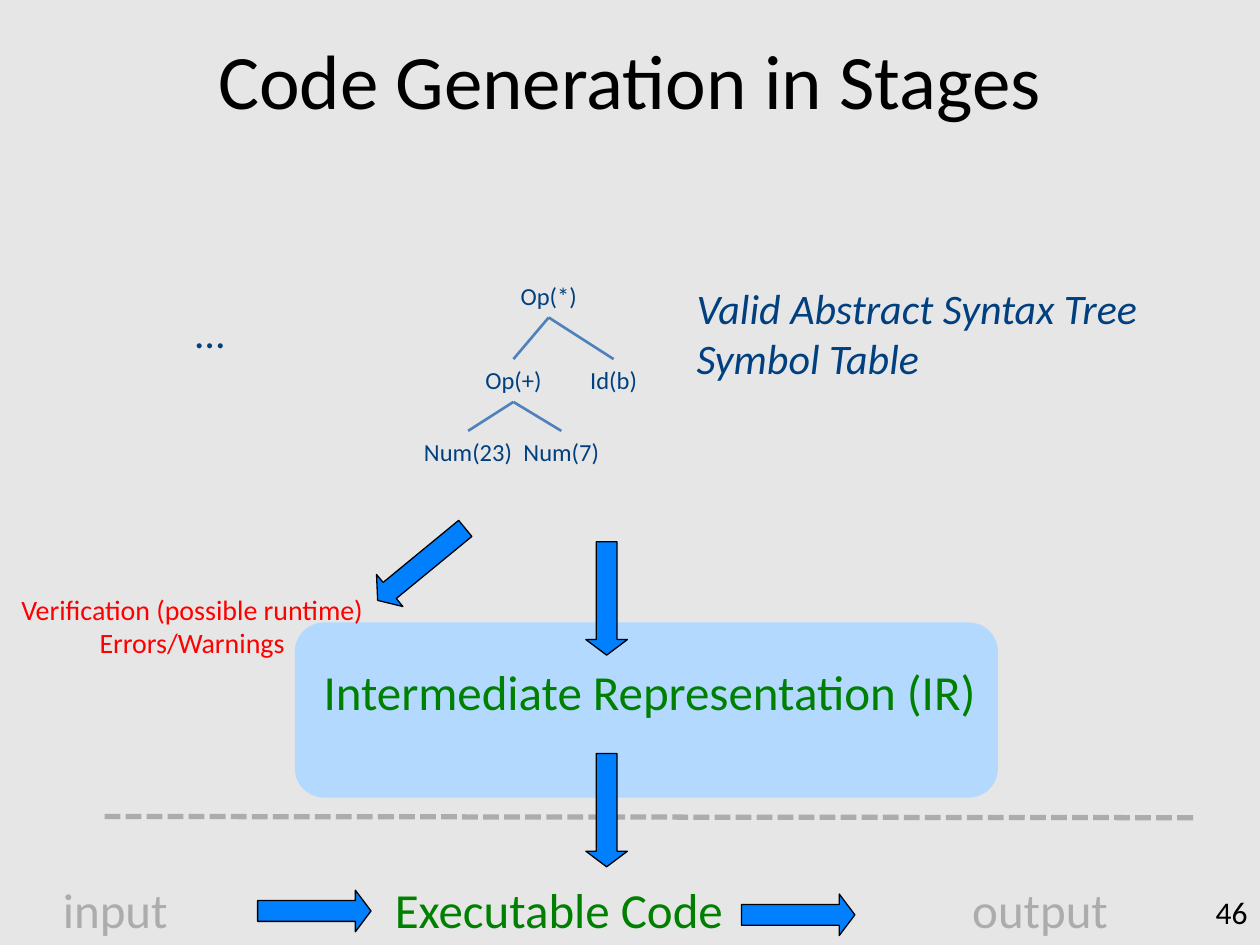
from pptx import Presentation
from pptx import util as u
from pptx.dml import color
from pptx.enum import dml, shapes, text
from pptx.oxml import ns
from lxml import etree


def rgb(value):
    return color.RGBColor.from_string(value)


class SlideBuilder:
    font = "Calibri"
    navy, green, red, gray = "004080", "008000", "FF0000", "ACACAC"
    black, blue, branch = "000000", "0080FF", "4F81BD"
    center, left, right = text.PP_ALIGN.CENTER, text.PP_ALIGN.LEFT, text.PP_ALIGN.RIGHT

    def __init__(self, slide, background):
        self.slide = slide
        slide.background.fill.solid()
        slide.background.fill.fore_color.rgb = rgb(background)

    def label(self, place, lines, size, ink, align=center, wrap=True, grow=True,
              anchor=text.MSO_ANCHOR.TOP, italic=False):
        box = self.slide.shapes.add_textbox(*map(u.Inches, place))
        frame = box.text_frame
        fit = text.MSO_AUTO_SIZE.SHAPE_TO_FIT_TEXT if grow else text.MSO_AUTO_SIZE.NONE
        frame_format = {"word_wrap": wrap, "auto_size": fit, "vertical_anchor": anchor}
        for name, value in frame_format.items():
            setattr(frame, name, value)
        span_format = {"name": self.font, "size": u.Pt(size), "italic": italic}
        for index, line in enumerate(lines):
            para = frame.paragraphs[0] if index == 0 else frame.add_paragraph()
            para.alignment = align
            span = para.add_run()
            span.text = line
            for name, value in span_format.items():
                setattr(span.font, name, value)
            span.font.color.rgb = rgb(ink)
        return box

    def shape(self, kind, place, fill, outline=None):
        shape = self.slide.shapes.add_shape(kind, *map(u.Inches, place))
        shape.shadow.inherit = False
        shape.fill.solid()
        shape.fill.fore_color.rgb = rgb(fill)
        if outline:
            shape.line.color.rgb = rgb(outline)
            shape.line.width = u.Pt(0.75)
        else:
            shape.line.fill.background()
        return shape

    def arrow(self, left, top, rotation=0):
        place = (left, top, 0.33, 0.9)
        arrow = self.shape(shapes.MSO_SHAPE.DOWN_ARROW, place, self.blue, self.black)
        arrow.adjustments[0] = 0.5
        arrow.adjustments[1] = 0.375
        arrow.rotation = rotation

    def line(self, start, end, ink, width, dash=None):
        ends = map(u.Inches, (*start, *end))
        line = self.slide.shapes.add_connector(shapes.MSO_CONNECTOR.STRAIGHT, *ends)
        line.line.color.rgb = rgb(ink)
        line.line.width = u.Pt(width)
        if dash:
            line.line.dash_style = dash
        etree.SubElement(line._element.spPr, ns.qn("a:effectLst"))
        return line

    def node(self, left, top, width, name):
        return self.label((left, top, width, 0.34), [name], 14, self.navy, wrap=False)

    def join(self, parent, child):
        line = self.line((0, 0), (1, 1), self.branch, 1.5)
        line.begin_connect(parent, 2)
        line.end_connect(child, 0)


def main():
    deck = Presentation()
    deck.slide_width, deck.slide_height = u.Inches(10), u.Inches(7.5)
    page = SlideBuilder(deck.slides.add_slide(deck.slide_layouts[6]), "E6E6E6")

    page.shape(shapes.MSO_SHAPE.ROUNDED_RECTANGLE, (2.34, 4.94, 5.58, 1.39), "B3D9FF")
    page.label((0.75, 0, 8.5, 1.25), ["Code Generation in Stages"], 44, page.black,
               grow=False, anchor=text.MSO_ANCHOR.MIDDLE)
    page.label((7.92, 7.04, 2.08, 0.3), ["46"], 18, page.black, page.right, grow=False)

    times = page.node(4.03, 2.18, 0.65, "Op(*)")
    plus = page.node(3.75, 2.85, 0.65, "Op(+)")
    variable = page.node(4.58, 2.85, 0.58, "Id(b)")
    first = page.node(3.26, 3.42, 0.91, "Num(23)")
    second = page.node(4.05, 3.42, 0.81, "Num(7)")
    for parent, child in ((times, variable), (times, plus), (plus, first), (plus, second)):
        page.join(parent, child)

    page.label((5.43, 2.19, 3.97, 0.91), ["Valid Abstract Syntax Tree", "Symbol Table"],
               24, page.navy, page.left, italic=True)
    page.label((0.25, 2.38, 2.83, 0.5), ["…"], 24, page.navy)
    page.label((-0.31, 4.65, 3.67, 0.64),
               ["Verification (possible runtime)", "Errors/Warnings"], 16, page.red)
    page.label((2.42, 5.2, 5.47, 0.57), ["Intermediate Representation (IR)"], 28,
               page.green, wrap=False)
    page.label((3.01, 6.93, 2.85, 0.57), ["Executable Code"], 28, page.green, wrap=False)
    for left, name in ((0, "input"), (7.34, "output")):
        page.label((left, 6.93, 1.83, 0.57), [name], 28, page.gray)

    page.line((0.83, 6.48), (9.49, 6.49), page.gray, 3, dml.MSO_LINE.SQUARE_DOT)
    page.arrow(3.18, 4.03, 50.6)
    for top in (4.3, 5.98):
        page.arrow(4.65, top)
    for left, top in ((2.33, 6.78), (6.17, 6.81)):
        page.arrow(left, top, 270)

    deck.save("out.pptx")


if __name__ == "__main__":
    main()
